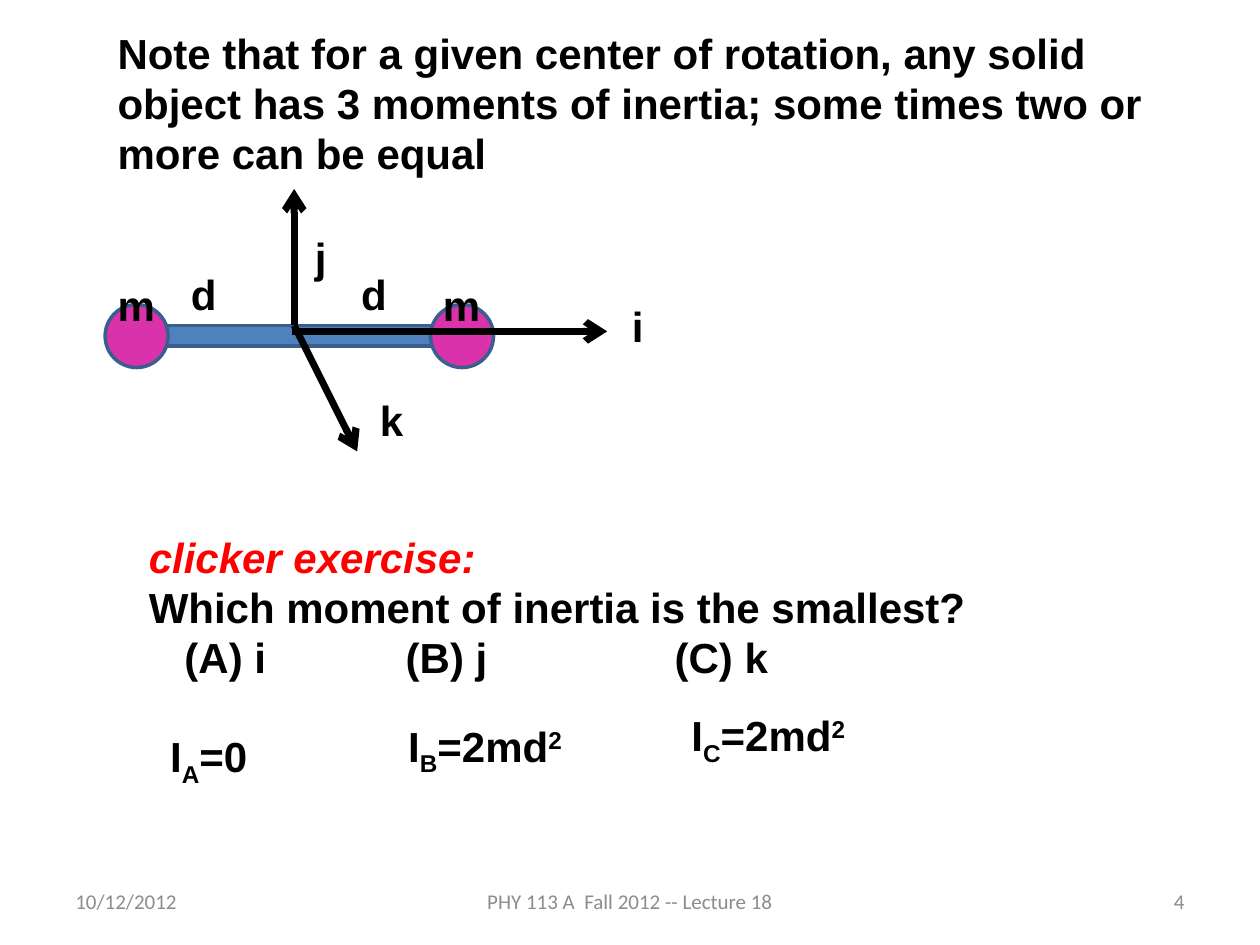
"""Builds a lecture slide on the three moments of inertia of a dumbbell."""
from lxml import etree
from pptx import Presentation
from pptx.dml.color import RGBColor
from pptx.enum import shapes, text
from pptx.oxml import ns
from pptx.util import Cm, Pt

COLOURS = {"black": "000000", "red": "FF0000", "grey": "8C8C8C",
           "rod": "4F81BD", "mass": "DA32AA", "outline": "3A5F8C"}
LEFT, CENTER, RIGHT = text.PP_ALIGN.LEFT, text.PP_ALIGN.CENTER, text.PP_ALIGN.RIGHT


def colour(name):
    return RGBColor.from_string(COLOURS[name])


def add_text(left, top, width, height, lines, tabs=()):
    box = slide.shapes.add_textbox(Cm(left), Cm(top), Cm(width), Cm(height))
    frame = box.text_frame
    frame.word_wrap = True
    for number, (runs, name) in enumerate(lines):
        paragraph = frame.paragraphs[0] if number == 0 else frame.add_paragraph()
        for content, baseline in runs:
            run = paragraph.add_run()
            run.text = content
            if baseline:
                run.font._element.set("baseline", str(baseline * 1000))
        if tabs and "\t" in runs[0][0]:
            tab_list = etree.SubElement(paragraph._p.get_or_add_pPr(), ns.qn("a:tabLst"))
            for position in tabs:
                etree.SubElement(tab_list, ns.qn("a:tab"), pos=str(Cm(position)), algn="l")
        paragraph.font.name = "Arial"
        paragraph.font.size = Pt(24)
        paragraph.font.bold = True
        paragraph.font.color.rgb = colour(name)
    return frame


presentation = Presentation()
presentation.slide_width = Cm(25.4)
presentation.slide_height = Cm(19.05)
slide = presentation.slides.add_slide(presentation.slide_layouts[6])

footers = [(1.27, 5.92, "10/12/2012", LEFT),
           (8.68, 8.04, "PHY 113 A  Fall 2012 -- Lecture 18", CENTER),
           (18.2, 5.93, "4", RIGHT)]
for left, width, content, alignment in footers:
    frame = add_text(left, 17.66, width, 1.01, [([(content, 0)], "grey")])
    frame.vertical_anchor = text.MSO_ANCHOR.MIDDLE
    paragraph = frame.paragraphs[0]
    paragraph.alignment = alignment
    paragraph.font.name = "Calibri"
    paragraph.font.size = Pt(12)
    paragraph.font.bold = False

add_text(2.12, 0.42, 22.01, 3.33, [([(
    "Note that for a given center of rotation, any solid object has 3 moments "
    "of inertia; some times two or more can be equal", 0)], "black")])

dumbbell = [(shapes.MSO_SHAPE.RECTANGLE, 2.75, 6.56, 6.35, 0.42, "rod"),
            (shapes.MSO_SHAPE.OVAL, 8.68, 6.14, 1.27, 1.27, "mass"),
            (shapes.MSO_SHAPE.OVAL, 2.12, 6.14, 1.27, 1.27, "mass")]
for kind, left, top, width, height, fill in dumbbell:
    shape = slide.shapes.add_shape(kind, Cm(left), Cm(top), Cm(width), Cm(height))
    shape.shadow.inherit = False
    shape.fill.solid()
    shape.fill.fore_color.rgb = colour(fill)
    shape.line.color.rgb = colour("outline")
    shape.line.width = Pt(2)

axes = [(5.93, 6.56, 5.93, 3.81), (5.93, 6.56, 7.2, 9.1), (5.89, 6.68, 12.24, 6.68)]
for ends in axes:
    axis = slide.shapes.add_connector(shapes.MSO_CONNECTOR.STRAIGHT, *map(Cm, ends))
    axis.line.color.rgb = colour("black")
    axis.line.width = Pt(4)
    etree.SubElement(axis.line._get_or_add_ln(), ns.qn("a:tailEnd"), type="arrow")
    etree.SubElement(axis._element.spPr, ns.qn("a:effectLst"))

labels = [("j", 6.1, 4.55), ("i", 12.49, 5.93), ("k", 7.41, 7.83),
          ("d", 3.6, 5.29), ("d", 7.03, 5.29),
          ("m", 2.12, 5.5), ("m", 8.68, 5.5)]
for content, left, top in labels:
    add_text(left, top, 1.69, 1.27, [([(content, 0)], "black")])

exercise = add_text(2.75, 10.58, 18.63, 3.33, [
    ([("clicker exercise:", 0)], "red"),
    ([("Which moment of inertia is the smallest?", 0)], "black"),
    ([("\t(A) i\t(B) j\t(C) k", 0)], "black")], tabs=(0.72, 5.18, 10.6))
exercise.paragraphs[0].font.italic = True

answers = [("B", [("=2md", 0), ("2", 30)], 7.98, 14.39),
           ("C", [("=2md", 0), ("2", 30)], 13.69, 14.18),
           ("A", [("=0", 0)], 3.18, 14.61)]
for letter, value, left, top in answers:
    add_text(left, top, 4.09, 1.27, [([("I", 0), (letter, -25)] + value, "black")])

presentation.save("out.pptx")
